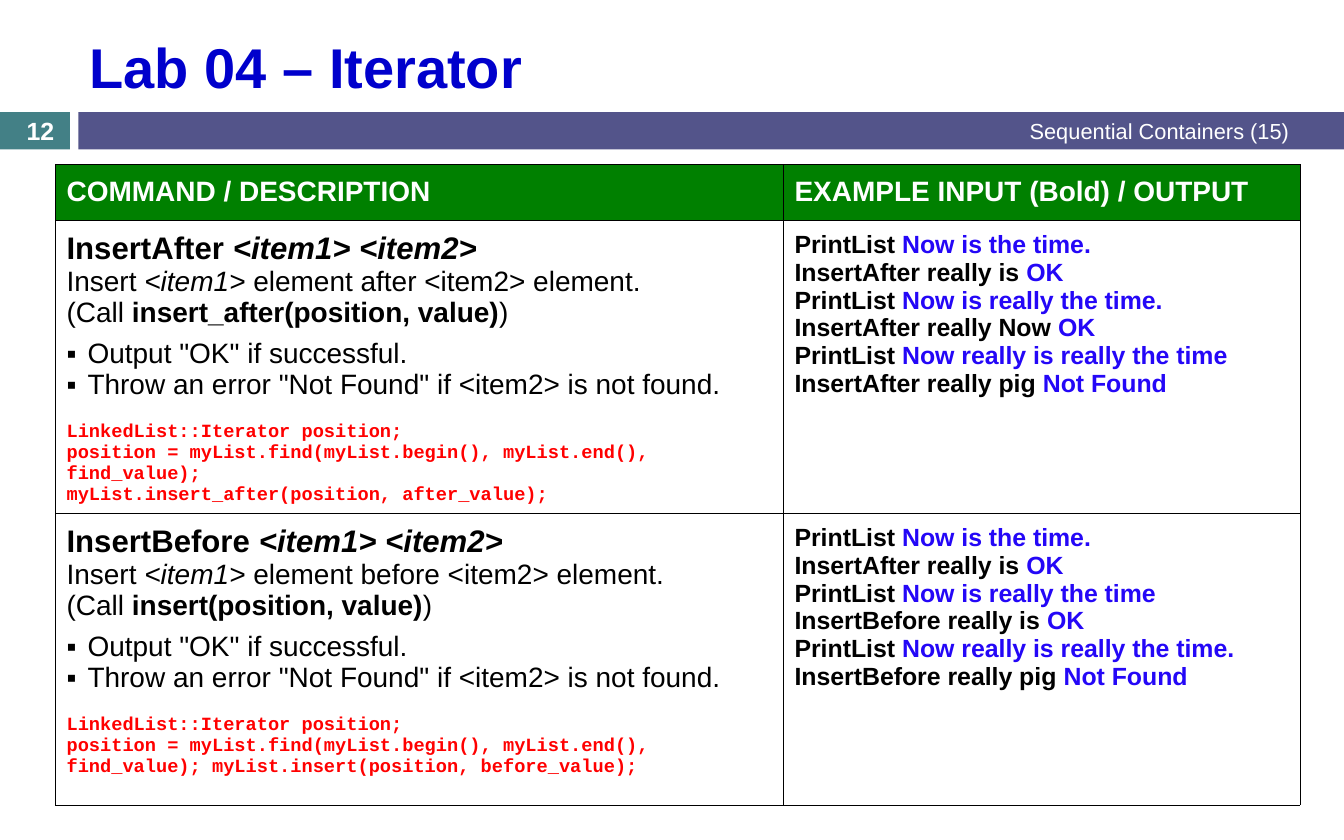
import pptx
import pptx.util
import pptx.dml.color
import pptx.enum.shapes
import pptx.enum.text
import pptx.oxml
import pptx.oxml.ns

Pt = pptx.util.Pt
RGBColor = pptx.dml.color.RGBColor
Align = pptx.enum.text.PP_ALIGN
Anchor = pptx.enum.text.MSO_ANCHOR

TEAL = RGBColor(0x43, 0x80, 0x86)
PURPLE = RGBColor(0x53, 0x54, 0x8A)
TITLE_BLUE = RGBColor(0x00, 0x00, 0xCC)
OUTPUT_BLUE = RGBColor(0x24, 0x07, 0xF7)
GREEN = RGBColor(0x00, 0x80, 0x00)
RED = RGBColor(0xFF, 0x00, 0x00)
BLACK = RGBColor(0, 0, 0)
WHITE = RGBColor(0xFF, 0xFF, 0xFF)

TABLE_LEFT = 35.6
COLUMN_WIDTHS = (468, 332)
HEADINGS = ("COMMAND / DESCRIPTION", "EXAMPLE INPUT (Bold) / OUTPUT")
RESULTS = (
    'Output "OK" if successful.',
    'Throw an error "Not Found" if <item2> is not found.',
)
FIND_CODE = "position = myList.find(myList.begin(), myList.end(), find_value);"

INSERT_AFTER = {
    "name": "InsertAfter",
    "place": "after",
    "call": "insert_after(position, value)",
    "code": (
        "LinkedList::Iterator position;",
        FIND_CODE,
        "myList.insert_after(position, after_value);",
    ),
    "examples": (
        ("PrintList ", "Now is the time."),
        ("InsertAfter really is ", "OK"),
        ("PrintList ", "Now is really the time."),
        ("InsertAfter really Now ", "OK"),
        ("PrintList ", "Now really is really the time"),
        ("InsertAfter really pig ", "Not Found"),
    ),
}
INSERT_BEFORE = {
    "name": "InsertBefore",
    "place": "before",
    "call": "insert(position, value)",
    "code": (
        "LinkedList::Iterator position;",
        FIND_CODE + " myList.insert(position, before_value);",
    ),
    "examples": (
        ("PrintList ", "Now is the time."),
        ("InsertAfter really is ", "OK"),
        ("PrintList ", "Now is really the time"),
        ("InsertBefore really is ", "OK"),
        ("PrintList ", "Now really is really the time."),
        ("InsertBefore really pig ", "Not Found"),
    ),
}


def add_span(para, text, size=18, color=BLACK, bold=False, italic=False, font="Arial"):
    """Append formatted text to a paragraph."""
    span = para.add_run()
    span.text = text
    span.font.name = font
    span.font.size = Pt(size)
    span.font.bold = bold
    span.font.italic = italic
    span.font.color.rgb = color


def next_para(frame):
    """Return the empty first paragraph of a frame, or a new one."""
    first = frame.paragraphs[0]
    return frame.add_paragraph() if first.runs else first


def set_bullet(para, indent=13.5):
    """Give a paragraph a square bullet with a hanging indent."""
    properties = para._p.get_or_add_pPr()
    properties.set("marL", str(Pt(indent)))
    properties.set("indent", str(-Pt(indent)))
    namespace = pptx.oxml.ns.nsdecls("a")
    properties.append(pptx.oxml.parse_xml(f'<a:buFont {namespace} typeface="Arial"/>'))
    properties.append(pptx.oxml.parse_xml(f'<a:buChar {namespace} char="▪"/>'))


def add_bar(page, left, width, color):
    """Draw one block of the band below the title."""
    bar = page.shapes.add_shape(
        pptx.enum.shapes.MSO_SHAPE.RECTANGLE, Pt(left), Pt(72), Pt(width), Pt(24)
    )
    bar.shadow.inherit = False
    bar.fill.solid()
    bar.fill.fore_color.rgb = color
    bar.line.fill.background()


def add_label(page, text, left, width, align, **style):
    """Place white text on the band."""
    box = page.shapes.add_textbox(Pt(left), Pt(72), Pt(width), Pt(24))
    frame = box.text_frame
    frame.word_wrap = True
    frame.margin_top = frame.margin_bottom = 0
    frame.vertical_anchor = Anchor.MIDDLE
    frame.paragraphs[0].alignment = align
    add_span(frame.paragraphs[0], text, color=WHITE, **style)


def add_title(page, text):
    """Fill and place the title placeholder."""
    title = page.shapes.title
    title.left, title.top, title.width, title.height = Pt(50.4), Pt(13.7), Pt(785.5), Pt(57.6)
    title.text_frame.vertical_anchor = Anchor.MIDDLE
    para = title.text_frame.paragraphs[0]
    para.alignment = Align.LEFT
    add_span(para, text, size=36, color=TITLE_BLUE, bold=True)


def format_cell(cell, fill):
    """Set the margins, fill and thin black borders of a cell."""
    cell.margin_left = cell.margin_right = cell.margin_top = cell.margin_bottom = Pt(7.2)
    cell.fill.solid()
    cell.fill.fore_color.rgb = fill
    for place, side in enumerate(("lnL", "lnR", "lnT", "lnB")):
        border = pptx.oxml.parse_xml(
            f'<a:{side} {pptx.oxml.ns.nsdecls("a")} w="{Pt(0.3)}"><a:solidFill>'
            f'<a:srgbClr val="{BLACK}"/></a:solidFill></a:{side}>'
        )
        cell._tc.get_or_add_tcPr().insert(place, border)


def add_grid(page, top, heights):
    """Add a two-column table without a style and return it."""
    frame = page.shapes.add_table(
        len(heights), len(COLUMN_WIDTHS), Pt(TABLE_LEFT), Pt(top),
        Pt(sum(COLUMN_WIDTHS)), Pt(sum(heights)),
    )
    table = frame.table
    table.first_row = table.horz_banding = False
    for column, width in zip(table.columns, COLUMN_WIDTHS):
        column.width = Pt(width)
    for row, height in zip(table.rows, heights):
        row.height = Pt(height)
    return table


def fill_headings(row):
    """Write the green heading row."""
    for cell, heading in zip(row.cells, HEADINGS):
        format_cell(cell, GREEN)
        cell.vertical_anchor = Anchor.MIDDLE
        add_span(cell.text_frame.paragraphs[0], heading, color=WHITE, bold=True)


def fill_command(row, command):
    """Write a command's description and its examples."""
    description, examples = row.cells
    format_cell(description, WHITE)
    format_cell(examples, WHITE)

    frame = description.text_frame
    para = frame.paragraphs[0]
    para.space_after = Pt(6)
    add_span(para, command["name"] + " ", size=20, bold=True)
    add_span(para, "<item1> <item2>", size=20, bold=True, italic=True)
    para.add_line_break()
    add_span(para, "Insert ")
    add_span(para, "<item1>", italic=True)
    add_span(para, f" element {command['place']} <item2> element.")
    para.add_line_break()
    add_span(para, "(Call ")
    add_span(para, command["call"], bold=True)
    add_span(para, ")")
    for result in RESULTS:
        para = next_para(frame)
        set_bullet(para)
        add_span(para, result)
    for number, line in enumerate(command["code"]):
        para = next_para(frame)
        para.space_before = Pt(0 if number else 13.5)
        add_span(para, line, size=12, color=RED, bold=True, font="Courier New")

    for entry, output in command["examples"]:
        para = next_para(examples.text_frame)
        add_span(para, entry, size=16, bold=True)
        add_span(para, output, size=16, color=OUTPUT_BLUE, bold=True)


def main():
    """Build the slide and save the deck."""
    deck = pptx.Presentation()
    deck.slide_width, deck.slide_height = Pt(864), Pt(540)
    page = deck.slides.add_slide(deck.slide_layouts[5])
    add_bar(page, 0, 45, TEAL)
    add_bar(page, 50.4, 813.6, PURPLE)
    add_title(page, "Lab 04 – Iterator")
    add_label(page, "Sequential Containers (15)", 324, 512, Align.RIGHT, size=14)
    add_label(page, "12", 0, 52, Align.CENTER, size=16, bold=True)
    upper = add_grid(page, 105.6, (34.6, 189.7))
    fill_headings(upper.rows[0])
    fill_command(upper.rows[1], INSERT_AFTER)
    lower = add_grid(page, 329.9, (177.5,))
    fill_command(lower.rows[0], INSERT_BEFORE)
    deck.save("out.pptx")


if __name__ == "__main__":
    main()
